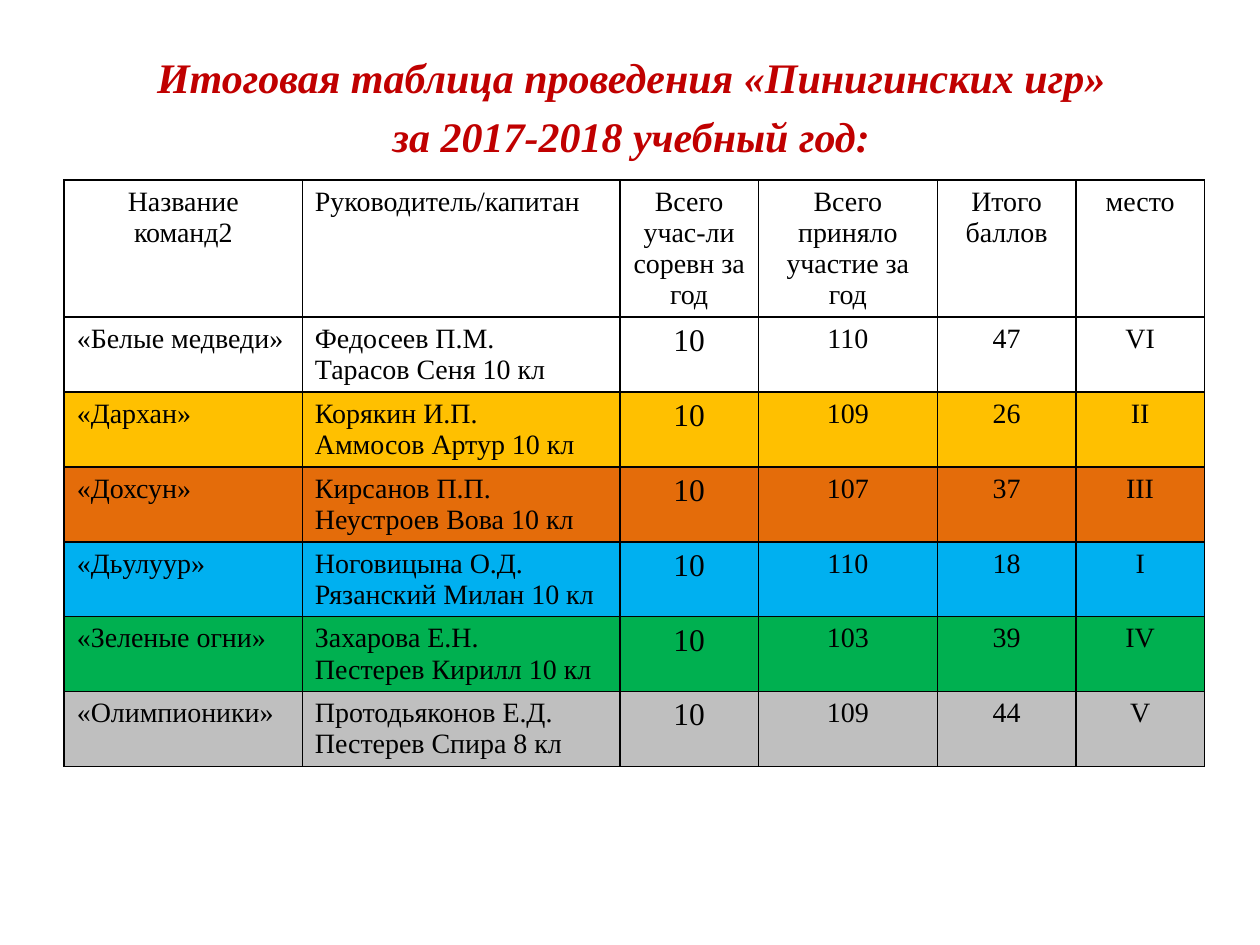
from dataclasses import dataclass

from pptx import Presentation, oxml
from pptx import util as u
from pptx.dml.color import RGBColor
from pptx.enum import text
from pptx.oxml import ns

MID, LEFT = text.PP_ALIGN.CENTER, text.PP_ALIGN.LEFT


@dataclass(frozen=True)
class Theme:
    face: str = "Times New Roman"
    ink: str = "000000"
    head: str = "C00000"
    big: int = 24
    count: int = 18
    cell: int = 16
    rule: int = 1


HEADING = ["Итоговая таблица проведения «Пинигинских игр»",
           "за 2017-2018 учебный год:"]
LABELS = ["Название команд2", "Руководитель/капитан",
          "Всего учас-ли соревн за год", "Всего приняло участие за год",
          "Итого баллов", "место"]
TEAMS = [
    (None, "«Белые медведи»", "Федосеев П.М.\nТарасов Сеня 10 кл", "10", "110", "47", "VI"),
    ("FFC000", "«Дархан»", "Корякин И.П.\nАммосов Артур 10 кл", "10", "109", "26", "II"),
    ("E46C0A", "«Дохсун»", "Кирсанов П.П.\nНеустроев Вова 10 кл", "10", "107", "37", "III"),
    ("00B0F0", "«Дьулуур»", "Ноговицына О.Д.\nРязанский Милан 10 кл", "10", "110", "18", "I"),
    ("00B050", "«Зеленые огни»", "Захарова Е.Н.\nПестерев Кирилл 10 кл", "10", "103", "39", "IV"),
    ("BFBFBF", "«Олимпионики»", "Протодьяконов Е.Д.\nПестерев Спира 8 кл", "10", "109", "44", "V"),
]
WIDTHS = [1.89, 2.52, 1.1, 1.42, 1.1, 1.02]
ROW = 0.41


class Page:
    def __init__(self, deck, theme):
        self.theme = theme
        self.slide = deck.slides.add_slide(deck.slide_layouts[1])
        title = self.slide.shapes.title.element
        title.getparent().remove(title)

    def style(self, para, align, size, color, **extra):
        para.alignment = align
        form = {"name": self.theme.face, "size": u.Pt(size), **extra}
        for run in para.runs:
            for key, val in form.items():
                setattr(run.font, key, val)
            run.font.color.rgb = RGBColor.from_string(color)

    def heading(self, lines, left, top, width, height):
        body = self.slide.placeholders[1]
        place = {"left": left, "top": top, "width": width, "height": height}
        for key, val in place.items():
            setattr(body, key, u.Inches(val))
        frame = body.text_frame
        frame.text = "\n".join(lines)
        for i, para in enumerate(frame.paragraphs):
            props = para._p.get_or_add_pPr()
            props.set("marL", "0")
            props.set("indent", "0")
            props.append(oxml.parse_xml(f'<a:buNone {ns.nsdecls("a")}/>'))
            para.space_before = u.Pt(0.2 * self.theme.big if i else 0)
            self.style(para, MID, self.theme.big, self.theme.head,
                       bold=True, italic=True)

    def border(self, cell):
        props = cell._tc.get_or_add_tcPr()
        for side in "LRTB":
            props.append(oxml.parse_xml(
                f'<a:ln{side} {ns.nsdecls("a")} w="{u.Pt(self.theme.rule)}">'
                f'<a:solidFill><a:srgbClr val="{self.theme.ink}"/></a:solidFill>'
                f'</a:ln{side}>'))

    def cell(self, cell, words, align, size, fill):
        cell.text = words
        for para in cell.text_frame.paragraphs:
            self.style(para, align, size, self.theme.ink)
        self.border(cell)
        if fill:
            cell.fill.solid()
            cell.fill.fore_color.rgb = RGBColor.from_string(fill)
        else:
            cell.fill.background()

    def table(self, labels, teams, left, top):
        rows = [(None, *labels), *teams]
        box = [u.Inches(n) for n in (left, top, sum(WIDTHS), ROW * len(rows))]
        grid = self.slide.shapes.add_table(len(rows), len(labels), *box).table
        grid.first_row = grid.horz_banding = False
        for col, width in zip(grid.columns, WIDTHS):
            col.width = u.Inches(width)
        for r, (fill, *cells) in enumerate(rows):
            grid.rows[r].height = u.Inches(ROW)
            for c, words in enumerate(cells):
                align = LEFT if c == 1 or (c == 0 and r) else MID
                size = self.theme.count if c == 2 and r else self.theme.cell
                self.cell(grid.cell(r, c), words, align, size, fill)


def main():
    deck = Presentation()
    deck.slide_width, deck.slide_height = u.Inches(10), u.Inches(7.5)
    page = Page(deck, Theme())
    page.heading(HEADING, 0.51, 0.36, 9, 5.91)
    page.table(LABELS, TEAMS, 0.51, 1.43)
    deck.save("out.pptx")


if __name__ == "__main__":
    main()
